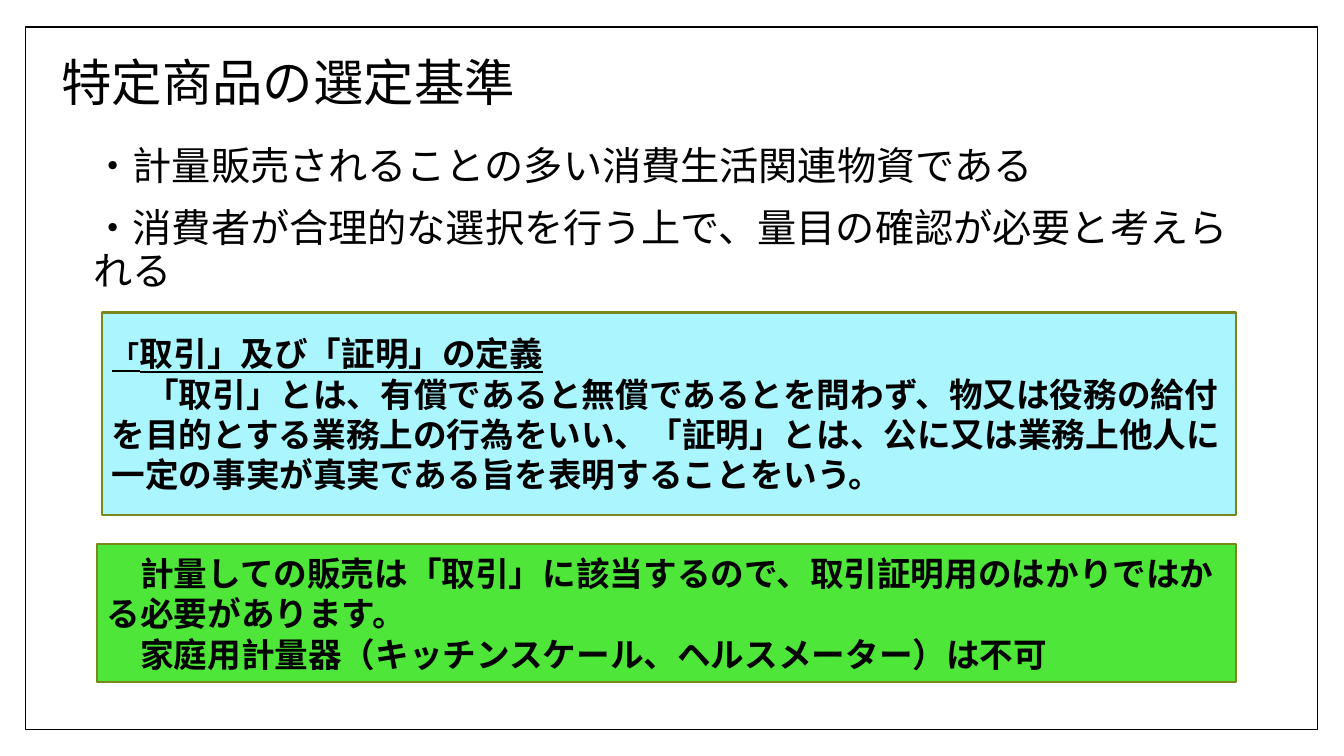
from pptx import Presentation
from pptx.dml.color import RGBColor
from pptx.enum.shapes import MSO_SHAPE as Shape
from pptx.enum.text import MSO_ANCHOR as Anchor, PP_ALIGN as Align
from pptx.util import Inches, Pt

BLACK = RGBColor(0x00, 0x00, 0x00)
WHITE = RGBColor(0xFF, 0xFF, 0xFF)
CYAN = RGBColor(0xAB, 0xF5, 0xFF)
GREEN = RGBColor(0x4E, 0xE7, 0x39)
OLIVE = RGBColor(0x7B, 0x87, 0x1D)

deck = Presentation()
deck.slide_width, deck.slide_height = Inches(13.33), Inches(7.5)
page = deck.slides.add_slide(deck.slide_layouts[6])


def add_box(place, fill, line, width):
    box = page.shapes.add_shape(Shape.RECTANGLE, *map(Inches, place))
    box.shadow.inherit = False
    box.fill.solid()
    box.fill.fore_color.rgb = fill
    box.line.color.rgb = line
    box.line.width = Pt(width)
    return box


def write(box, anchor, paragraphs, para_format):
    """Each paragraph is a list of (text, font values) spans."""
    frame = box.text_frame
    frame.word_wrap = True
    frame.vertical_anchor = anchor
    for index, spans in enumerate(paragraphs):
        para = frame.add_paragraph() if index else frame.paragraphs[0]
        para.alignment = Align.LEFT
        for name, value in para_format.items():
            setattr(para, name, value)
        for text, font in spans:
            span = para.add_run()
            span.text = text
            span.font.color.rgb = BLACK
            for name, value in ({"name": "Calibri"} | font).items():
                setattr(span.font, name, value)


# Page frame
add_box((0.25, 0.27, 12.82, 6.97), WHITE, BLACK, 1)

# Title
title = page.shapes.add_textbox(*map(Inches, (0.51, 0.42, 4.84, 0.86)))
write(title, Anchor.MIDDLE, [[("特定商品の選定基準", {"size": Pt(36)})]],
      {"line_spacing": 0.9})

# Selection criteria
criteria = page.shapes.add_textbox(*map(Inches, (0.78, 1.41, 11.75, 1.56)))
points = ["・計量販売されることの多い消費生活関連物資である",
          "・消費者が合理的な選択を行う上で、量目の確認が必要と考えられる"]
write(criteria, Anchor.TOP, [[(point, {"size": Pt(28)})] for point in points],
      {"line_spacing": 0.9, "space_before": Pt(14)})
for para in criteria.text_frame.paragraphs:
    para._p.get_or_add_pPr().set("marL", str(Inches(0.05)))

# Definition and consequence boxes
strong = {"size": Pt(24), "bold": True}
heading = strong | {"underline": True}
definition = [
    [("「", heading | {"size": Pt(20)}), ("取引」及び「証明」の定義", heading)],
    [("　「取引」とは、有償であると無償であるとを問わず、物又は役務の給付を目的とする"
      "業務上の行為をいい、「証明」とは、公に又は業務上他人に一定の事実が真実である旨を"
      "表明することをいう。", strong)],
]
consequence = [
    [("　計量しての販売は「取引」に該当するので、取引証明用のはかりではかる必要があります。",
      strong)],
    [("　家庭用計量器（キッチンスケール、ヘルスメーター）は不可", strong)],
]
for place, fill, paragraphs in [
    ((1.01, 3.1, 11.25, 2.01), CYAN, definition),
    ((0.96, 5.4, 11.3, 1.37), GREEN, consequence),
]:
    write(add_box(place, fill, OLIVE, 1.5), Anchor.MIDDLE, paragraphs, {})

deck.save("out.pptx")
